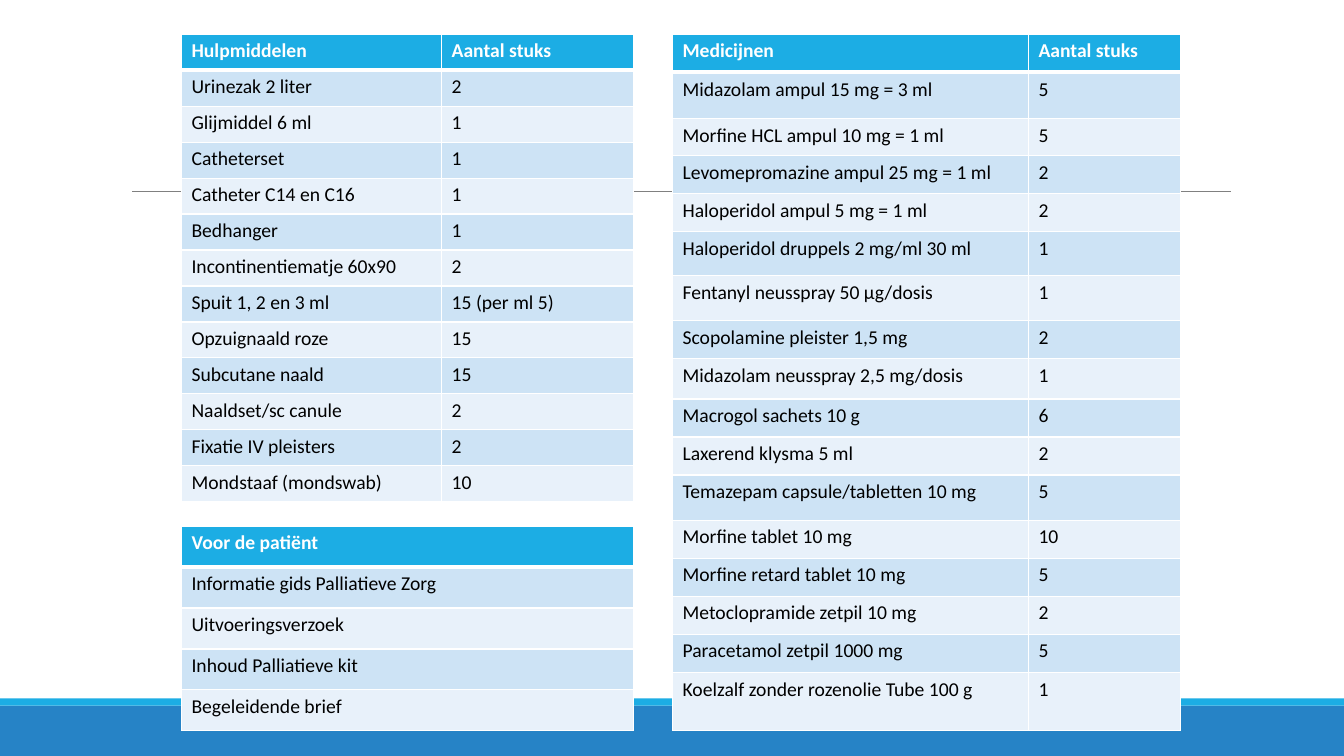
from pptx import Presentation
from pptx.dml.color import RGBColor
from pptx.enum.shapes import MSO_CONNECTOR, MSO_SHAPE
from pptx.oxml import parse_xml
from pptx.oxml.ns import nsdecls
from pptx.util import Inches, Pt

RECTANGLE = MSO_SHAPE.RECTANGLE
STRAIGHT = MSO_CONNECTOR.STRAIGHT

# Content
SUPPLIES = [
    ("Hulpmiddelen", "Aantal stuks"),
    ("Urinezak 2 liter", "2"),
    ("Glijmiddel 6 ml", "1"),
    ("Catheterset", "1"),
    ("Catheter C14 en C16", "1"),
    ("Bedhanger", "1"),
    ("Incontinentiematje 60x90", "2"),
    ("Spuit 1, 2 en 3 ml", "15 (per ml 5)"),
    ("Opzuignaald roze", "15"),
    ("Subcutane naald", "15"),
    ("Naaldset/sc canule", "2"),
    ("Fixatie IV pleisters", "2"),
    ("Mondstaaf (mondswab)", "10"),
]
MEDICINES = [
    ("Medicijnen", "Aantal stuks"),
    ("Midazolam ampul 15 mg = 3 ml", "5"),
    ("Morfine HCL ampul 10 mg = 1 ml", "5"),
    ("Levomepromazine ampul 25 mg = 1 ml", "2"),
    ("Haloperidol ampul 5 mg = 1 ml", "2"),
    ("Haloperidol druppels 2 mg/ml 30 ml", "1"),
    ("Fentanyl neusspray 50 µg/dosis", "1"),
    ("Scopolamine pleister 1,5 mg", "2"),
    ("Midazolam neusspray 2,5 mg/dosis", "1"),
    ("Macrogol sachets 10 g", "6"),
    ("Laxerend klysma 5 ml", "2"),
    ("Temazepam capsule/tabletten 10 mg", "5"),
    ("Morfine tablet 10 mg", "10"),
    ("Morfine retard tablet 10 mg", "5"),
    ("Metoclopramide zetpil 10 mg", "2"),
    ("Paracetamol zetpil 1000 mg", "5"),
    ("Koelzalf zonder rozenolie Tube 100 g", "1"),
]
PATIENT = [
    ("Voor de patiënt",),
    ("Informatie gids Palliatieve Zorg",),
    ("Uitvoeringsverzoek",),
    ("Inhoud Palliatieve kit",),
    ("Begeleidende brief",),
]

# Rows of the medicine table that differ from the usual height
MEDICINE_ROW = 0.38
TALL_ROWS = {1: 0.46, 2: 0.37, 5: 0.44, 6: 0.45, 8: 0.4, 11: 0.45, 16: 0.58}
MEDICINE_ROWS = [TALL_ROWS.get(i, MEDICINE_ROW) for i in range(len(MEDICINES))]

# Rows, left, top, total height, column widths, relative row heights
TABLES = [
    (SUPPLIES, 1.8, 0.34, 4.64, (2.58, 1.9), [1] * len(SUPPLIES)),
    (MEDICINES, 6.67, 0.34, 6.91, (3.53, 1.51), MEDICINE_ROWS),
    (PATIENT, 1.8, 5.22, 2.03, (4.48,), [1] * len(PATIENT)),
]

# Colours
BLUE, CYAN, GREY = "2683C6", "1CADE4", "808080"
WHITE, BLACK = "FFFFFF", "000000"
BANDS = ("E8F1FA", "CDE3F5")


def colour(code):
    return RGBColor.from_string(code)


def add_band(page, top, height, code):
    band = page.shapes.add_shape(
        RECTANGLE, 0, Inches(top), Inches(13.33), Inches(height))
    band.shadow.inherit = False
    band.fill.solid()
    band.fill.fore_color.rgb = colour(code)
    band.line.fill.background()


def add_rule(page, left, right, top):
    rule = page.shapes.add_connector(
        STRAIGHT, Inches(left), Inches(top), Inches(right), Inches(top))
    rule.line.color.rgb = colour(GREY)
    rule.line.width = Pt(0.5)
    rule.element.spPr.append(parse_xml(f"<a:effectLst {nsdecls('a')}/>"))


def write(cell, text, size=14, font="Calibri", code=BLACK, bold=False):
    span = cell.text_frame.paragraphs[0].add_run()
    span.text = text
    span.font.size = Pt(size)
    span.font.name = font
    span.font.bold = bold
    span.font.color.rgb = colour(code)


def set_borders(cell, top=1, bottom=1):
    properties = cell._tc.get_or_add_tcPr()
    widths = {"L": 1, "R": 1, "T": top, "B": bottom}
    for position, (side, width) in enumerate(widths.items()):
        properties.insert(position, parse_xml(
            f'<a:ln{side} {nsdecls("a")} w="{Pt(width)}"><a:solidFill>'
            f'<a:srgbClr val="{WHITE}"/></a:solidFill></a:ln{side}>'))


def add_list(page, rows, left, top, height, widths, shares):
    frame = page.shapes.add_table(
        len(rows), len(widths), Inches(left), Inches(top),
        Inches(sum(widths)), Inches(height))
    table = frame.table
    for column, width in zip(table.columns, widths):
        column.width = Inches(width)
    for i, (texts, share) in enumerate(zip(rows, shares)):
        table.rows[i].height = Inches(height * share / sum(shares))
        header = i == 0
        for j, text in enumerate(texts):
            cell = table.cell(i, j)
            cell.fill.solid()
            cell.fill.fore_color.rgb = colour(CYAN if header else BANDS[i % 2])
            set_borders(cell, top=3 if i == 1 else 1, bottom=3 if header else 1)
            write(cell, text, code=WHITE if header else BLACK, bold=header)


def main():
    deck = Presentation()
    deck.slide_width, deck.slide_height = Inches(13.33), Inches(7.5)
    page = deck.slides.add_slide(deck.slide_layouts[6])

    # Background bands and rule
    add_band(page, 7, 0.5, BLUE)
    add_band(page, 6.93, 0.07, CYAN)
    add_rule(page, 1.31, 12.21, 1.9)

    # Tables
    for table in TABLES:
        add_list(page, *table)

    deck.save("out.pptx")


if __name__ == "__main__":
    main()
